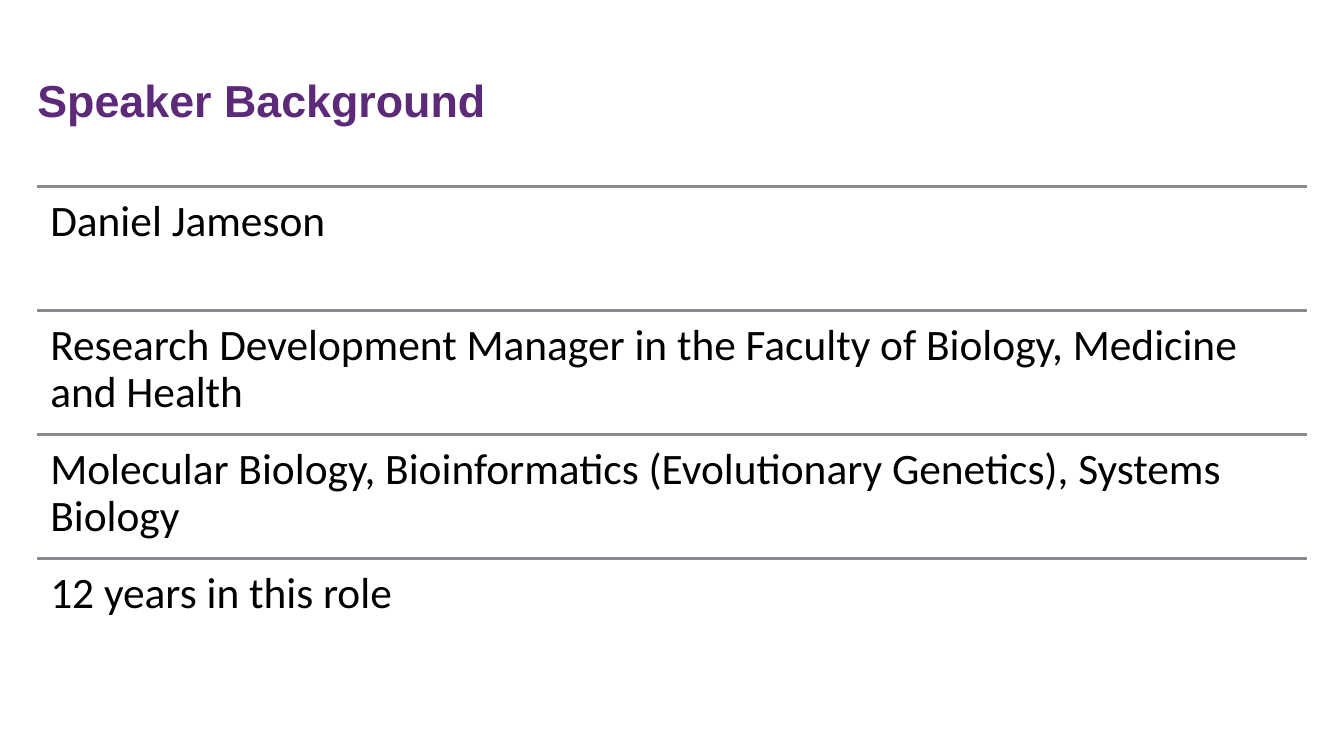
import pptx
import pptx.dml.color
import pptx.enum.shapes
import pptx.enum.text
import pptx.oxml
import pptx.util

Pt = pptx.util.Pt
PURPLE = pptx.dml.color.RGBColor(0x5D, 0x29, 0x79)
GREY = pptx.dml.color.RGBColor(0x87, 0x8A, 0x8E)
BLACK = pptx.dml.color.RGBColor(0, 0, 0)

LEFT = 26.64
TOP = 133.2
WIDTH = 907.2
ROW_HEIGHT = 88.56
FACTS = [
    "Daniel Jameson",
    "Research Development Manager in the Faculty of Biology, Medicine and Health",
    "Molecular Biology, Bioinformatics (Evolutionary Genetics), Systems Biology",
    "12 years in this role",
]


def write_text(box, text, font, size, color, bold=False, inset=0, spacing=1.0,
               anchor=pptx.enum.text.MSO_ANCHOR.TOP):
    frame = box.text_frame
    frame.word_wrap = True
    frame.auto_size = pptx.enum.text.MSO_AUTO_SIZE.NONE
    frame.vertical_anchor = anchor
    frame.margin_left = frame.margin_right = Pt(inset)
    frame.margin_top = frame.margin_bottom = Pt(inset)
    para = frame.paragraphs[0]
    para.alignment = pptx.enum.text.PP_ALIGN.LEFT
    para.line_spacing = spacing
    span = para.add_run()
    span.text = text
    span.font.name = font
    span.font.size = Pt(size)
    span.font.bold = bold
    span.font.color.rgb = color


deck = pptx.Presentation()
deck.slide_width = Pt(960)
deck.slide_height = Pt(540)
page = deck.slides.add_slide(deck.slide_layouts[5])

title = page.shapes.title
title.left, title.top = Pt(LEFT), Pt(LEFT)
title.width, title.height = Pt(905.76), Pt(ROW_HEIGHT)
write_text(title, "Speaker Background", font="Arial", size=32, color=PURPLE,
           bold=True, anchor=pptx.enum.text.MSO_ANCHOR.MIDDLE)

for row, fact in enumerate(FACTS):
    top = TOP + row * ROW_HEIGHT
    rule = page.shapes.add_connector(
        pptx.enum.shapes.MSO_CONNECTOR.STRAIGHT,
        Pt(LEFT), Pt(top), Pt(LEFT + WIDTH), Pt(top))
    rule.line.color.rgb = GREY
    rule.line.width = Pt(2)
    rule._element.spPr.append(pptx.oxml.parse_xml(
        '<a:effectLst xmlns:a="http://schemas.openxmlformats.org/drawingml/2006/main"/>'))
    box = page.shapes.add_textbox(Pt(LEFT), Pt(top), Pt(WIDTH), Pt(ROW_HEIGHT))
    write_text(box, fact, font="Calibri", size=31, color=BLACK, inset=9.3, spacing=0.9)

deck.save("out.pptx")
